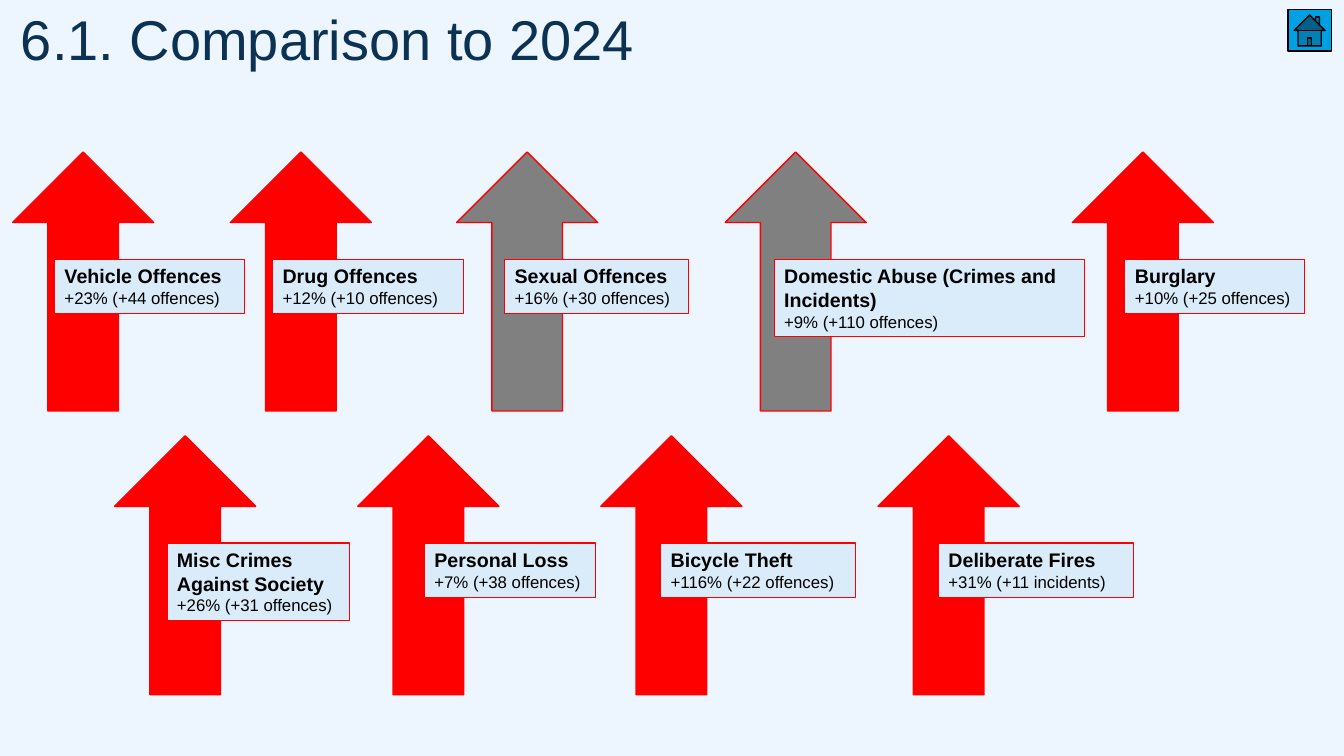
from pptx import Presentation
from pptx.dml.color import RGBColor
from pptx.enum.shapes import MSO_SHAPE
from pptx.enum.text import MSO_ANCHOR, MSO_AUTO_SIZE, PP_ALIGN
from pptx.util import Pt

BACKGROUND = RGBColor(0xED, 0xF6, 0xFF)
NAVY = RGBColor(0x0B, 0x31, 0x53)
RED = RGBColor(0xFF, 0x00, 0x00)
GREY = RGBColor(0x80, 0x80, 0x80)
PALE_BLUE = RGBColor(0xDA, 0xEB, 0xFA)
BRIGHT_BLUE = RGBColor(0x00, 0xA0, 0xE2)
BLACK = RGBColor(0x00, 0x00, 0x00)

ARROW_WIDTH, ARROW_HEIGHT = 100.8, 185
LABEL_DROP = 76.6
LABEL_HEIGHTS = {1: 38.9, 2: 55.4}

# arrow left, arrow colour, label left, label width, heading lines, heading, change
ROWS = {
    108.6: [
        (9, RED, 39, 136, 1, "Vehicle Offences", "+23% (+44 offences)"),
        (164.5, RED, 194.8, 136, 1, "Drug Offences", "+12% (+10 offences)"),
        (326.2, GREY, 360.5, 131, 1, "Sexual Offences", "+16% (+30 offences)"),
        (518, GREY, 553, 221.4, 2, "Domestic Abuse (Crimes and Incidents)",
         "+9% (+110 offences)"),
        (766, RED, 803.6, 128, 1, "Burglary", "+10% (+25 offences)"),
    ],
    311.3: [
        (81.8, RED, 119.3, 130.4, 2, "Misc Crimes Against Society",
         "+26% (+31 offences)"),
        (255.6, RED, 303.2, 122, 1, "Personal Loss", "+7% (+38 offences)"),
        (429.2, RED, 472, 139, 1, "Bicycle Theft", "+116% (+22 offences)"),
        (627.2, RED, 670.4, 139, 1, "Deliberate Fires", "+31% (+11 incidents)"),
    ],
}


def write_text(paragraph, text, size, color=BLACK, bold=False, spacing=None):
    paragraph.alignment = PP_ALIGN.LEFT
    if spacing:
        paragraph.line_spacing = spacing
    run = paragraph.add_run()
    run.text = text
    run.font.name = "Arial"
    run.font.size = Pt(size)
    run.font.bold = bold
    run.font.color.rgb = color


def add_figure(slide, kind, left, top, width, height, fill, line, weight=1):
    shape = slide.shapes.add_shape(kind, Pt(left), Pt(top), Pt(width), Pt(height))
    shape.shadow.inherit = False
    shape.fill.solid()
    shape.fill.fore_color.rgb = fill
    shape.line.color.rgb = line
    shape.line.width = Pt(weight)
    return shape


def add_title(slide, text):
    box = slide.shapes.add_textbox(Pt(15), Pt(8.6), Pt(794), Pt(60.5))
    frame = box.text_frame
    frame.word_wrap = True
    frame.margin_left = frame.margin_right = frame.margin_top = frame.margin_bottom = 0
    write_text(frame.paragraphs[0], text, 40, color=NAVY, spacing=0.9)


def add_label(slide, left, top, width, height, heading, change):
    label = add_figure(slide, MSO_SHAPE.RECTANGLE, left, top, width, height,
                       PALE_BLUE, RED, weight=0.75)
    frame = label.text_frame
    frame.word_wrap = True
    frame.auto_size = MSO_AUTO_SIZE.SHAPE_TO_FIT_TEXT
    frame.vertical_anchor = MSO_ANCHOR.TOP
    write_text(frame.paragraphs[0], heading, 14, bold=True)
    write_text(frame.add_paragraph(), change, 12)


def main():
    presentation = Presentation()
    presentation.slide_width, presentation.slide_height = Pt(960), Pt(540)
    slide = presentation.slides.add_slide(presentation.slide_layouts[6])
    slide.background.fill.solid()
    slide.background.fill.fore_color.rgb = BACKGROUND

    add_title(slide, "6.1. Comparison to 2024")
    for top, offences in ROWS.items():
        for arrow_left, color, left, width, lines, heading, change in offences:
            add_figure(slide, MSO_SHAPE.UP_ARROW, arrow_left, top,
                       ARROW_WIDTH, ARROW_HEIGHT, color, RED)
            add_label(slide, left, top + LABEL_DROP, width,
                      LABEL_HEIGHTS[lines], heading, change)
    add_figure(slide, MSO_SHAPE.ACTION_BUTTON_HOME, 920, 7, 31, 29.5,
               BRIGHT_BLUE, BLACK)
    presentation.save("out.pptx")


if __name__ == "__main__":
    main()
